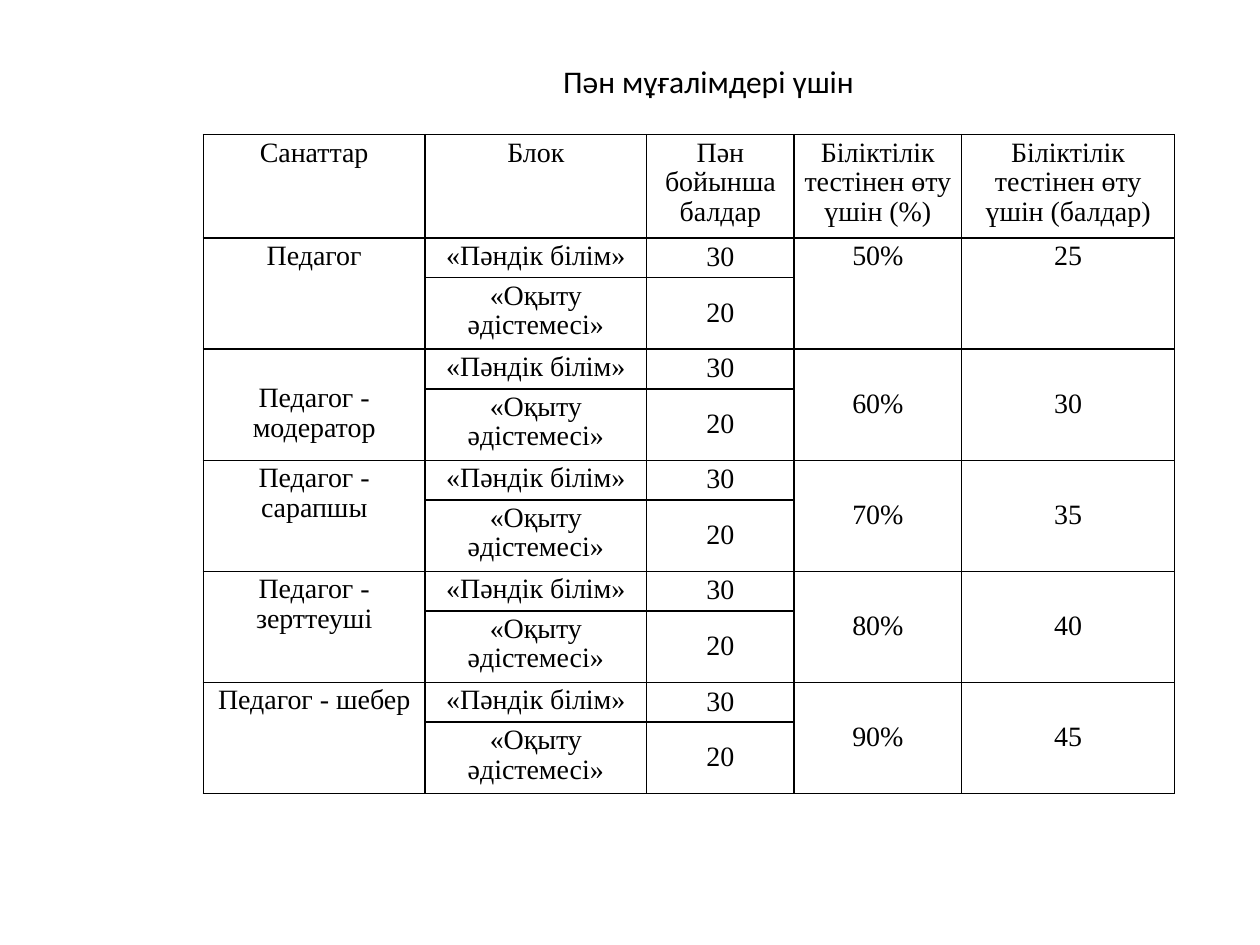
from lxml import etree
from pptx import Presentation
from pptx import util as u
from pptx.dml.color import RGBColor
from pptx.enum import text
from pptx.oxml.ns import qn

BLACK = "000000"
HEADINGS = [
    "Санаттар",
    "Блок",
    "Пән бойынша балдар",
    "Біліктілік тестінен өту үшін (%)",
    "Біліктілік тестінен өту үшін (балдар)",
]
CATEGORIES = [
    ("Педагог", "50%", "25"),
    ("Педагог - модератор", "60%", "30"),
    ("Педагог - сарапшы", "70%", "35"),
    ("Педагог - зерттеуші", "80%", "40"),
    ("Педагог - шебер", "90%", "45"),
]
BLOCKS = [("«Пәндік білім»", "30"), ("«Оқыту әдістемесі»", "20")]
COLUMN_WIDTHS = [126.7, 126.7, 84.2, 95.8, 121.7]
HEADER_HEIGHT = 57
BLOCK_HEIGHTS = [21.8, 39.7]


def style_font(font, name, size, color=BLACK):
    """Set the typeface, size and colour of a font."""
    font.name, font.size = name, u.Pt(size)
    font.color.rgb = RGBColor.from_string(color)


def style_cell(cell, color=BLACK):
    """Clear the fill, set tight margins and draw the four borders."""
    cell.margin_left = cell.margin_right = u.Pt(3.6)
    cell.margin_top = cell.margin_bottom = u.Pt(2.2)
    cell.fill.background()
    properties = cell._tc.get_or_add_tcPr()
    for index, side in enumerate(("lnL", "lnR", "lnT", "lnB")):
        line = etree.Element(qn(f"a:{side}"), w=str(u.Pt(1)))
        fill = etree.SubElement(line, qn("a:solidFill"))
        etree.SubElement(fill, qn("a:srgbClr"), val=color)
        properties.insert(index, line)


def write_cell(cell, words, middle=False):
    """Write centred words in a cell."""
    cell.text = words
    cell.vertical_anchor = text.MSO_ANCHOR.MIDDLE if middle else text.MSO_ANCHOR.TOP
    para = cell.text_frame.paragraphs[0]
    para.alignment = text.PP_ALIGN.CENTER
    para.line_spacing = 0.95
    style_font(para.font, "Times New Roman", 16)


def add_title(page, left, top, width, height):
    """Place and format the slide title."""
    title = page.shapes.title
    title.left, title.top, title.width, title.height = map(u.Pt, (left, top, width, height))
    frame = title.text_frame
    frame.text = "Пән мұғалімдері үшін"
    frame.word_wrap = False
    frame.auto_size = text.MSO_AUTO_SIZE.SHAPE_TO_FIT_TEXT
    frame.vertical_anchor = text.MSO_ANCHOR.TOP
    para = frame.paragraphs[0]
    para.alignment = text.PP_ALIGN.LEFT
    style_font(para.font, "Calibri", 18)


def add_score_table(page, left, top):
    """Build the table of pass scores, two block rows for each category."""
    heights = [HEADER_HEIGHT] + BLOCK_HEIGHTS * len(CATEGORIES)
    box = map(u.Pt, (left, top, sum(COLUMN_WIDTHS), sum(heights)))
    table = page.shapes.add_table(len(heights), len(HEADINGS), *box).table
    table.first_row = table.horz_banding = False
    for column, width in zip(table.columns, COLUMN_WIDTHS):
        column.width = u.Pt(width)
    for row, height in zip(table.rows, heights):
        row.height = u.Pt(height)
    for cell in table.iter_cells():
        style_cell(cell)
    for column, heading in enumerate(HEADINGS):
        write_cell(table.cell(0, column), heading)

    for index, (category, percent, score) in enumerate(CATEGORIES):
        first = 1 + index * len(BLOCKS)
        for column, words in ((0, category), (3, percent), (4, score)):
            cell = table.cell(first, column)
            cell.merge(table.cell(first + len(BLOCKS) - 1, column))
            write_cell(cell, words, middle=column > 0 and index > 0)
        for row, (block, points) in enumerate(BLOCKS, first):
            write_cell(table.cell(row, 1), block)
            write_cell(table.cell(row, 2), points, middle=True)
    table.cell(3, 0).margin_top = u.Pt(20)


def main():
    """Build and save the deck."""
    deck = Presentation()
    deck.slide_width, deck.slide_height = u.Pt(720), u.Pt(540)
    page = deck.slides.add_slide(deck.slide_layouts[5])
    add_score_table(page, 116.2, 77)
    add_title(page, 314.6, 31.7, 187.2, 28.8)
    deck.save("out.pptx")


if __name__ == "__main__":
    main()
